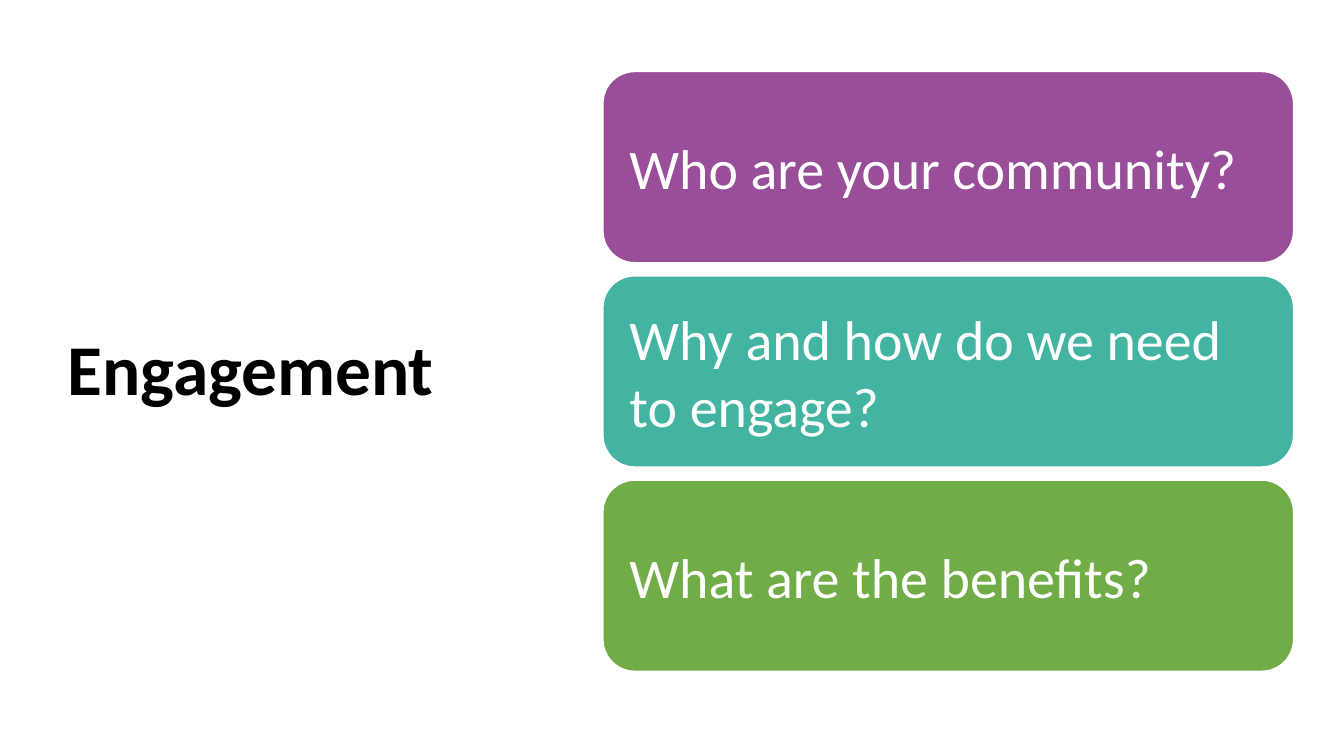
from dataclasses import dataclass

from pptx import Presentation
from pptx.dml.color import RGBColor
from pptx.enum.shapes import MSO_SHAPE
from pptx.enum.text import MSO_ANCHOR, PP_ALIGN
from pptx.util import Inches, Pt


@dataclass(frozen=True)
class Theme:
    """Hold the colours, font and type sizes of the slide."""

    font: str = "Calibri"
    heading_color: str = "000000"
    question_color: str = "FFFFFF"
    outline: str = "FFFFFF"
    card_fills: tuple = ("994E99", "42B4A1", "70AD47")
    heading_size: int = 51
    question_size: int = 40
    outline_width: int = 1


THEME = Theme()
QUESTIONS = (
    "Who are your community?",
    "Why and how do we need to engage?",
    "What are the benefits?",
)


def apply_format(target, values):
    """Set each named value on the target."""
    for name, value in values.items():
        setattr(target, name, value)


def write_text(frame, wording, color, font_format, frame_format, paragraph_format):
    """Fill a text frame with one formatted, left-aligned paragraph."""
    apply_format(frame, {"word_wrap": True, "vertical_anchor": MSO_ANCHOR.MIDDLE, **frame_format})
    paragraph = frame.paragraphs[0]
    apply_format(paragraph, {"alignment": PP_ALIGN.LEFT, **paragraph_format})
    run = paragraph.add_run()
    run.text = wording
    apply_format(run.font, {"name": THEME.font, **font_format})
    run.font.color.rgb = RGBColor.from_string(color)


def add_heading(slide, wording, left, top, width, height):
    """Place the heading, centred vertically in its box."""
    heading = slide.shapes.add_textbox(Inches(left), Inches(top), Inches(width), Inches(height))
    write_text(
        heading.text_frame,
        wording,
        THEME.heading_color,
        {"size": Pt(THEME.heading_size), "bold": True},
        {},
        {"line_spacing": 0.9},
    )


def add_question_cards(slide, questions, left, top, width, height, gap=0.13, inset=0.17):
    """Stack equal question cards to fill the box."""
    card_height = (height - gap * (len(questions) - 1)) / len(questions)
    margins = {f"margin_{side}": Inches(inset) for side in ("left", "top", "right", "bottom")}
    for index, (question, fill) in enumerate(zip(questions, THEME.card_fills)):
        card = slide.shapes.add_shape(
            MSO_SHAPE.ROUNDED_RECTANGLE,
            Inches(left),
            Inches(top + index * (card_height + gap)),
            Inches(width),
            Inches(card_height),
        )
        card.shadow.inherit = False
        card.fill.solid()
        card.fill.fore_color.rgb = RGBColor.from_string(fill)
        card.line.color.rgb = RGBColor.from_string(THEME.outline)
        card.line.width = Pt(THEME.outline_width)
        write_text(
            card.text_frame,
            question,
            THEME.question_color,
            {"size": Pt(THEME.question_size)},
            margins,
            {},
        )


def main():
    """Build and save the engagement slide."""
    presentation = Presentation()
    apply_format(presentation, {"slide_width": Inches(13.33), "slide_height": Inches(7.5)})
    slide = presentation.slides.add_slide(presentation.slide_layouts[6])
    add_heading(slide, "Engagement", 0.57, 0.68, 4.16, 6.02)
    add_question_cards(slide, QUESTIONS, 5.98, 0.71, 6.85, 5.95)
    presentation.save("out.pptx")


if __name__ == "__main__":
    main()
